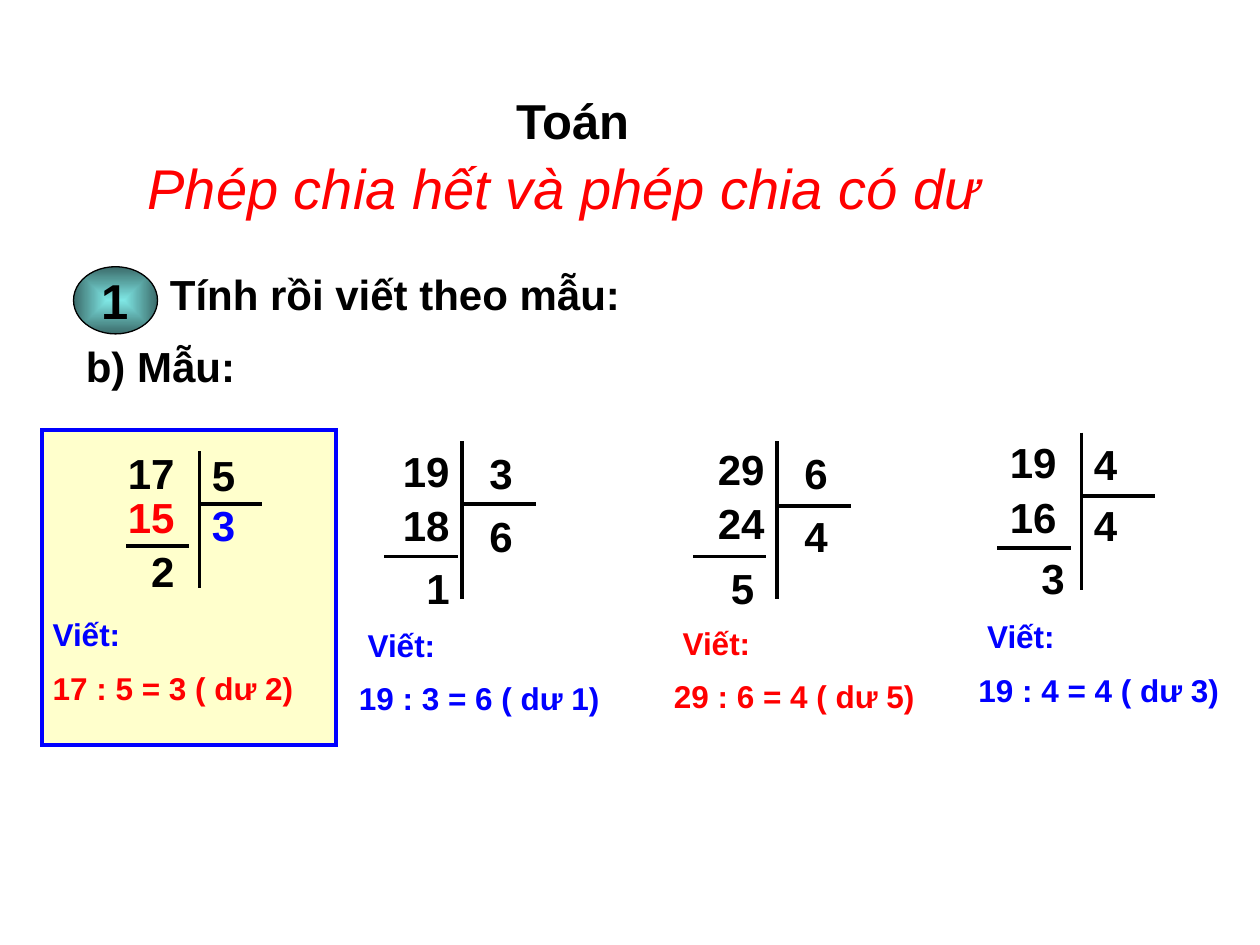
from dataclasses import dataclass

from lxml.etree import SubElement
from pptx import Presentation
from pptx.dml.color import RGBColor
from pptx.enum.shapes import MSO_CONNECTOR, MSO_SHAPE
from pptx.enum.text import MSO_ANCHOR, MSO_AUTO_SIZE, PP_ALIGN as Align
from pptx.oxml import parse_xml
from pptx.oxml.ns import nsdecls, qn
from pptx.util import Inches, Pt

BLACK = RGBColor(0x00, 0x00, 0x00)
RED = RGBColor(0xFF, 0x00, 0x00)
BLUE = RGBColor(0x00, 0x00, 0xFF)
CREAM = RGBColor(0xFF, 0xFF, 0xCC)
AQUA = RGBColor(0x7F, 0xE7, 0xE5)
TEAL = RGBColor(0x3B, 0x6B, 0x6A)

FONT = "Arial"
CELL = Inches(1) / 12  # the slide is a grid of 120 columns by 90 rows
NUMBER_WIDTH = 8
NUMBER_HEIGHT = 6.12


@dataclass
class Division:
    """A long division; rows count from the top of its upright bar."""
    numbers: tuple  # dividend, divisor, product, quotient, remainder
    answer: str
    bar: float  # column of the upright bar
    top: float  # row where the bar starts
    rows: tuple  # one row for each number
    quotient_row: float
    subtract_row: float
    answer_row: float
    height: float = 15
    rule: float = 7
    subtract_shift: float = -8
    right_shift: float = 0
    remainder_shift: float = -8
    answer_shift: float = -11
    align: Align = Align.LEFT
    colours: tuple = (BLACK,) * 5
    answer_colours: tuple = (BLUE, BLUE)


DIVISIONS = (
    Division(("17", "5", "15", "3", "2"), " 17 : 5 = 3 ( dư 2)", 19, 43,
             (-1, -0.8, 3.2, 4, 8.4), 5, 9, 15, height=13, rule=6,
             subtract_shift=-7, remainder_shift=-5.8, answer_shift=-16,
             colours=(BLACK, BLACK, RED, BLUE, BLACK),
             answer_colours=(BLUE, RED)),
    Division(("19", "3", "18", "6", "1"), "19 : 3 = 6 ( dư 1)", 44, 42,
             (-0.2, 0, 5, 6, 11), 6, 11, 17, subtract_shift=-7.4,
             right_shift=-2, align=Align.RIGHT),
    Division(("29", "6", "24", "4", "5"), "29 : 6 = 4 ( dư 5)", 74, 42,
             (-0.4, 0, 4.8, 6, 11), 6.2, 11, 16.8, right_shift=-2,
             remainder_shift=-9, align=Align.RIGHT,
             answer_colours=(RED, RED)),
    Division(("19", "4", "16", "4", "3"), "19 : 4 = 4 ( dư 3)", 103, 41.2,
             (-0.2, 0, 5, 5.8, 10.8), 6, 11, 17, remainder_shift=-5),
)


def grid(*cells):
    return [round(cell * CELL) for cell in cells]


def format_paragraph(paragraph, size, colour, bold=True, align=Align.LEFT):
    paragraph.alignment = align
    for run in paragraph.runs:
        run.font.name = FONT
        run.font.size = Pt(size)
        run.font.bold = bold
        run.font.color.rgb = colour


def space_before_half_line(paragraph):
    spacing = parse_xml(f'<a:spcBef {nsdecls("a")}><a:spcPct val="50000"/></a:spcBef>')
    paragraph._p.get_or_add_pPr().insert(0, spacing)


def add_text(slide, lines, box, size, colours, align=Align.LEFT):
    shape = slide.shapes.add_textbox(*grid(*box))
    frame = shape.text_frame
    frame.word_wrap = True
    frame.auto_size = MSO_AUTO_SIZE.SHAPE_TO_FIT_TEXT
    frame.text = "\n".join(lines)
    for paragraph, colour in zip(frame.paragraphs, colours):
        format_paragraph(paragraph, size, colour, align=align)
        space_before_half_line(paragraph)


def add_line(slide, *ends):
    line = slide.shapes.add_connector(MSO_CONNECTOR.STRAIGHT, *grid(*ends))
    line.line.color.rgb = BLACK
    line.line.width = Pt(2.25)
    SubElement(line._element.spPr, qn("a:effectLst"))


def add_title(slide):
    # Wide enough to hold the whole title on one line
    shape = slide.shapes.add_textbox(*grid(12, 14, 85, 10))
    frame = shape.text_frame
    frame.word_wrap = False
    frame.text = "Phép chia hết và phép chia có dư "
    paragraph = frame.paragraphs[0]
    format_paragraph(paragraph, 32, RED, bold=False, align=Align.CENTER)
    run = paragraph.runs[0]
    run.font.italic = True
    outline = parse_xml(
        f'<a:ln {nsdecls("a")} w="{Pt(0.75)}"><a:solidFill>'
        f'<a:srgbClr val="{RED}"/></a:solidFill></a:ln>')
    run.font._element.insert(0, outline)


def add_badge(slide):
    badge = slide.shapes.add_shape(MSO_SHAPE.OVAL, *grid(7, 25.4, 8, 6.4))
    badge.shadow.inherit = False
    badge.line.color.rgb = BLACK
    badge.line.width = Pt(0.75)
    gradient = parse_xml(
        f'<a:gradFill {nsdecls("a")} rotWithShape="1"><a:gsLst>'
        f'<a:gs pos="0"><a:srgbClr val="{AQUA}"/></a:gs>'
        f'<a:gs pos="100000"><a:srgbClr val="{TEAL}"/></a:gs></a:gsLst>'
        '<a:path path="shape"><a:fillToRect l="50000" t="50000" r="50000" '
        'b="50000"/></a:path></a:gradFill>')
    badge._element.spPr.find(qn("a:prstGeom")).addnext(gradient)
    frame = badge.text_frame
    frame.word_wrap = False
    frame.vertical_anchor = MSO_ANCHOR.MIDDLE
    frame.text = "1"
    format_paragraph(frame.paragraphs[0], 28, BLACK, align=Align.CENTER)


def add_sample_panel(slide):
    panel = slide.shapes.add_shape(MSO_SHAPE.RECTANGLE, *grid(4, 41, 28, 30))
    panel.shadow.inherit = False
    panel.fill.solid()
    panel.fill.fore_color.rgb = CREAM
    panel.line.color.rgb = BLUE
    panel.line.width = Pt(2.25)
    # Sharp corners
    SubElement(panel._element.spPr.find(qn("a:ln")), qn("a:miter"), lim="800000")


def add_division(slide, division):
    bar, top = division.bar, division.top
    left, right = bar - NUMBER_WIDTH, bar + division.right_shift
    columns = (left, right, left, right, bar + division.remainder_shift)
    for number, column, row, colour in zip(
            division.numbers, columns, division.rows, division.colours):
        box = (column, top + row, NUMBER_WIDTH, NUMBER_HEIGHT)
        add_text(slide, [number], box, 24, [colour], division.align)

    # Upright bar, quotient rule and subtraction rule
    quotient_y, subtract_y = top + division.quotient_row, top + division.subtract_row
    subtract_x = bar + division.subtract_shift
    add_line(slide, bar, top, bar, top + division.height)
    add_line(slide, bar, quotient_y, bar + division.rule, quotient_y)
    add_line(slide, subtract_x, subtract_y, subtract_x + division.rule, subtract_y)

    # Written answer
    box = (bar + division.answer_shift, top + division.answer_row, 30, 10.3)
    add_text(slide, [" Viết:", division.answer], box, 18, division.answer_colours)


def main():
    presentation = Presentation()
    presentation.slide_width, presentation.slide_height = grid(120, 90)
    slide = presentation.slides.add_slide(presentation.slide_layouts[6])

    # Heading and task
    add_badge(slide)
    add_text(slide, ["Tính rồi viết theo mẫu:"], (15, 25, 51, 6.12), 24, [BLACK])
    add_text(slide, ["b) Mẫu:"], (7, 31.8, 19, 6.12), 24, [BLACK])
    add_text(slide, ["Toán"], (48, 8, 19, 6.84), 28, [BLACK])
    add_title(slide)

    # Worked sample and exercises
    add_sample_panel(slide)
    for division in DIVISIONS:
        add_division(slide, division)

    presentation.save("out.pptx")


if __name__ == "__main__":
    main()
